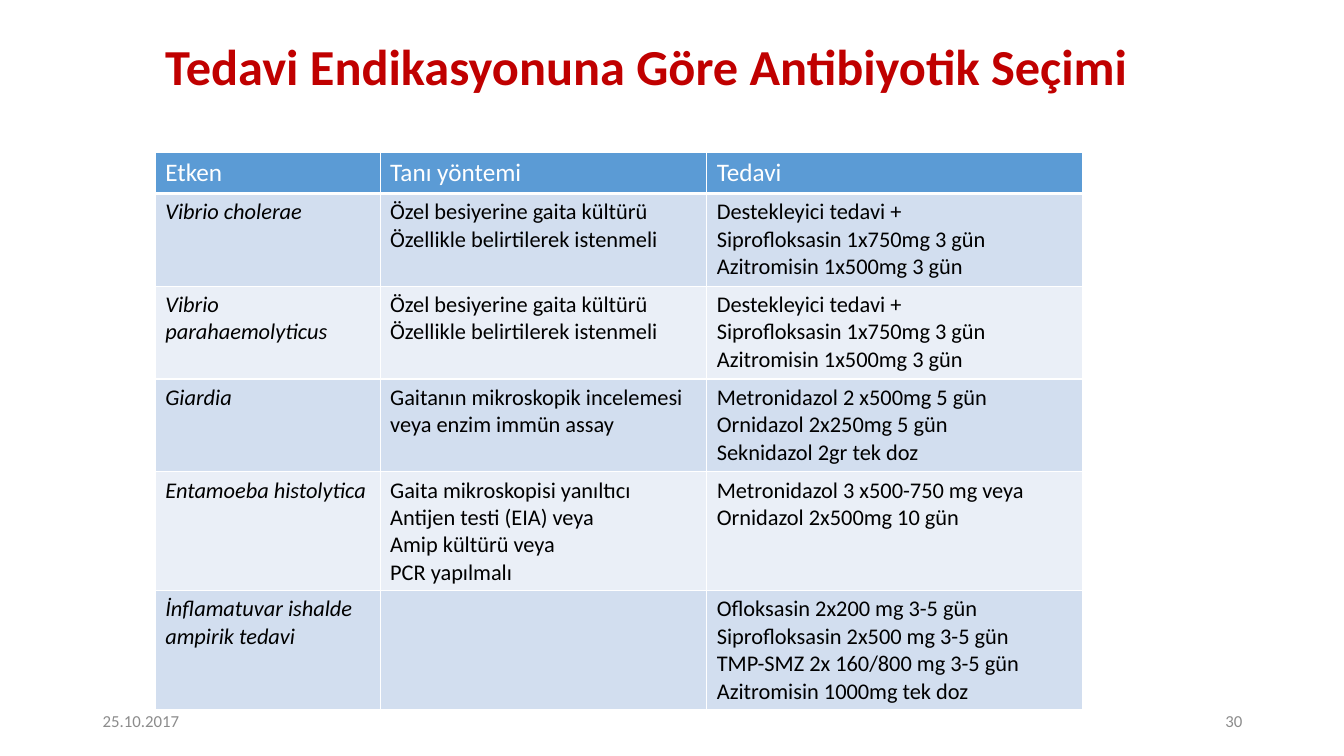
from typing import NamedTuple

from lxml.etree import SubElement
from pptx import Presentation
from pptx.dml.color import RGBColor
from pptx.enum.text import MSO_ANCHOR as Anchor, PP_ALIGN as Align
from pptx.oxml.ns import qn
from pptx.util import Inches, Pt

FONT = "Calibri"
WHITE, BLACK, RED, GRAY = "FFFFFF", "000000", "C00000", "8C8C8C"
HEADER_FILL = "5B9BD5"
BAND_FILLS = ("D2DEEF", "EAEFF7")
COLUMN_WIDTHS = (2.23, 3.24, 3.73)
HEADER_HEIGHT = 0.41


class Label(NamedTuple):
    text: str
    left: float
    top: float
    width: float
    height: float
    size: float
    color: str
    anchor: Anchor = Anchor.MIDDLE
    align: Align = Align.LEFT
    bold: bool = False


class Treatment(NamedTuple):
    agent: str
    diagnosis: str
    therapy: str
    height: float


LABELS = (
    Label("Tedavi Endikasyonuna Göre Antibiyotik Seçimi", 1.54, 0.33, 10.04, 0.67,
          36, RED, anchor=Anchor.BOTTOM, bold=True),
    Label("30", 9.42, 6.95, 3, 0.4, 12, GRAY, align=Align.RIGHT),
    Label("25.10.2017", 0.92, 6.95, 3, 0.4, 12, GRAY),
)

HEADINGS = ("Etken", "Tanı yöntemi", "Tedavi")
CULTURE = "Özel besiyerine gaita kültürü Özellikle belirtilerek istenmeli"
VIBRIO_THERAPY = ("Destekleyici tedavi +\nSiprofloksasin 1x750mg 3 gün\n"
                  "Azitromisin 1x500mg 3 gün")
TREATMENTS = (
    Treatment("Vibrio cholerae", CULTURE, VIBRIO_THERAPY, 0.92),
    Treatment("Vibrio parahaemolyticus", CULTURE, VIBRIO_THERAPY, 0.92),
    Treatment("Giardia", "Gaitanın mikroskopik incelemesi veya enzim immün assay",
              "Metronidazol 2 x500mg 5 gün\nOrnidazol 2x250mg 5 gün\n"
              "Seknidazol 2gr tek doz", 0.92),
    Treatment("Entamoeba histolytica",
              "Gaita mikroskopisi yanıltıcı\nAntijen testi (EIA) veya\n"
              "Amip kültürü veya\nPCR yapılmalı",
              "Metronidazol 3 x500-750 mg veya Ornidazol 2x500mg 10 gün", 1.18),
    Treatment("İnflamatuvar ishalde ampirik tedavi", "",
              "Ofloksasin 2x200 mg 3-5 gün\nSiprofloksasin 2x500 mg 3-5 gün\n"
              "TMP-SMZ 2x 160/800 mg 3-5 gün\nAzitromisin 1000mg tek doz", 1.18),
)


def rgb(color: str) -> RGBColor:
    return RGBColor.from_string(color)


def style_text(tf, size: float, color: str, bold: bool = False,
               italic: bool = False, align: Align = Align.LEFT) -> None:
    for p in tf.paragraphs:
        p.alignment = align
        for r in p.runs:
            r.font.name = FONT
            r.font.size = Pt(size)
            r.font.bold = bold
            r.font.italic = italic
            r.font.color.rgb = rgb(color)


def add_label(s, label: Label) -> None:
    sp = s.shapes.add_textbox(Inches(label.left), Inches(label.top),
                              Inches(label.width), Inches(label.height))
    tf = sp.text_frame
    tf.word_wrap = True
    tf.vertical_anchor = label.anchor
    tf.text = label.text
    style_text(tf, label.size, label.color, bold=label.bold, align=label.align)


def add_borders(cell, bottom: float) -> None:
    tc_pr = cell._tc.get_or_add_tcPr()
    for side, width in (("L", 1), ("R", 1), ("T", 1), ("B", bottom)):
        ln = SubElement(tc_pr, qn(f"a:ln{side}"), w=str(Pt(width)))
        fill = SubElement(ln, qn("a:solidFill"))
        SubElement(fill, qn("a:srgbClr"), val=WHITE)


def fill_cell(cell, text: str, fill: str, size: float, color: str,
              italic: bool = False, bottom: float = 1) -> None:
    add_borders(cell, bottom)
    cell.fill.solid()
    cell.fill.fore_color.rgb = rgb(fill)
    cell.text_frame.text = text
    style_text(cell.text_frame, size, color, italic=italic)


def add_treatment_table(s) -> None:
    heights = (HEADER_HEIGHT, *(t.height for t in TREATMENTS))
    table = s.shapes.add_table(len(heights), len(COLUMN_WIDTHS), Inches(1.54), Inches(1.51),
                               Inches(sum(COLUMN_WIDTHS)), Inches(sum(heights))).table
    for column, width in zip(table.columns, COLUMN_WIDTHS):
        column.width = Inches(width)
    for row, height in zip(table.rows, heights):
        row.height = Inches(height)
    for col, heading in enumerate(HEADINGS):
        fill_cell(table.cell(0, col), heading, HEADER_FILL, 18, WHITE, bottom=3)
    for i, t in enumerate(TREATMENTS):
        for col, text in enumerate((t.agent, t.diagnosis, t.therapy)):
            fill_cell(table.cell(i + 1, col), text, BAND_FILLS[i % 2], 16, BLACK,
                      italic=col == 0)


def main() -> None:
    prs = Presentation()
    prs.slide_width, prs.slide_height = Inches(13.33), Inches(7.5)
    s = prs.slides.add_slide(prs.slide_layouts[6])
    title, *footers = LABELS
    add_label(s, title)
    add_treatment_table(s)
    for footer in footers:
        add_label(s, footer)
    prs.save("out.pptx")


if __name__ == "__main__":
    main()
